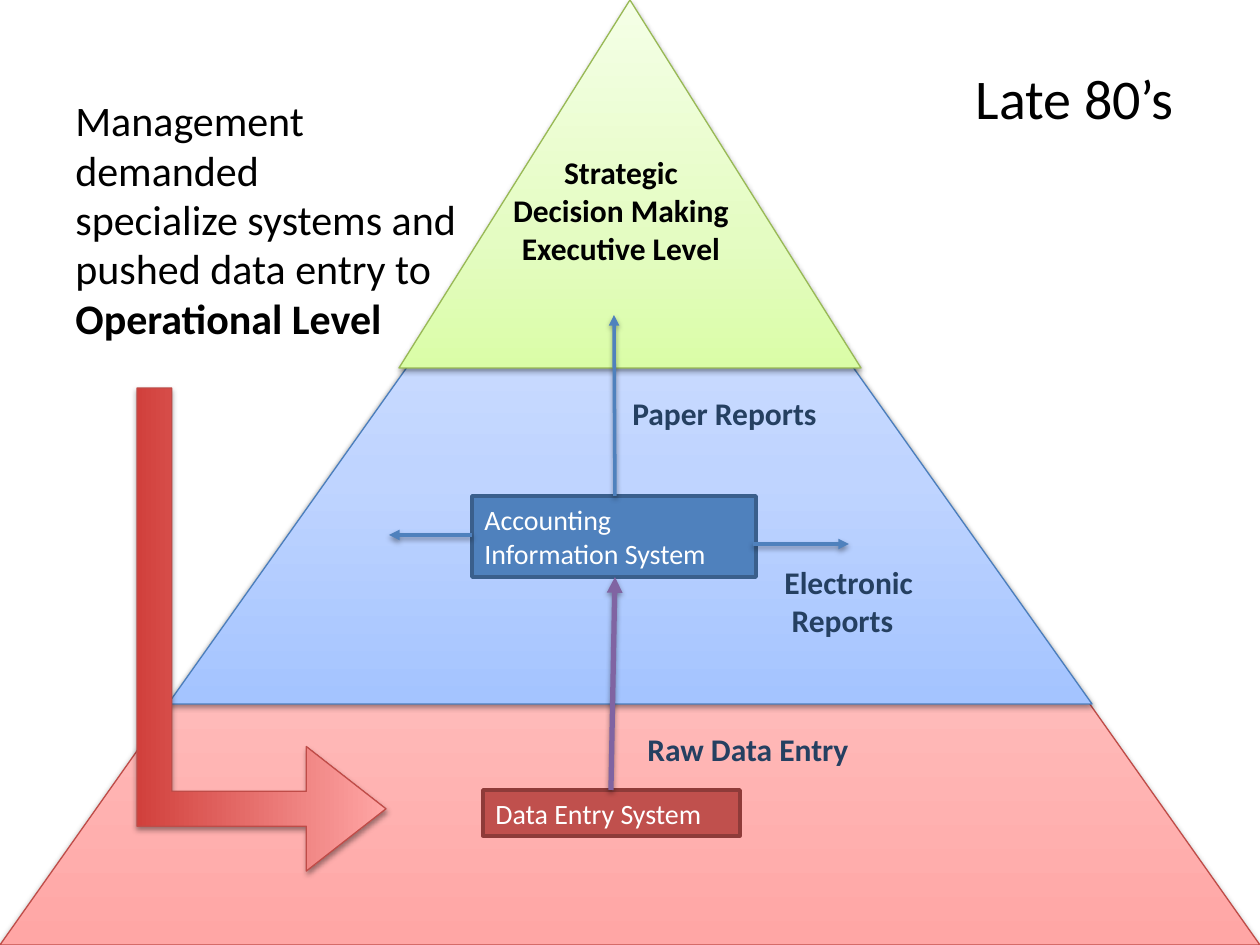
from dataclasses import dataclass

from lxml import etree
from pptx import Presentation
from pptx.dml.color import RGBColor
from pptx.enum.shapes import MSO_CONNECTOR, MSO_SHAPE
from pptx.enum.text import MSO_ANCHOR, PP_ALIGN
from pptx.oxml.ns import qn
from pptx.util import Emu, Pt

TRIANGLE = MSO_SHAPE.ISOSCELES_TRIANGLE
RECTANGLE = MSO_SHAPE.RECTANGLE
BENT_ARROW = MSO_SHAPE.BENT_UP_ARROW
STRAIGHT = MSO_CONNECTOR.STRAIGHT
LEFT, CENTER, RIGHT = PP_ALIGN.LEFT, PP_ALIGN.CENTER, PP_ALIGN.RIGHT
TOP, MIDDLE = MSO_ANCHOR.TOP, MSO_ANCHOR.MIDDLE

PX_PER_INCH = 126
PAGE_WIDTH, PAGE_HEIGHT = 1260, 945


@dataclass(frozen=True)
class Theme:
    font: str = "Calibri"
    heading: int = 32
    statement: int = 24
    label: int = 18
    system: int = 16
    black: str = "000000"
    white: str = "FFFFFF"
    navy: str = "254061"
    blue: str = "4F81BD"
    blue_edge: str = "3A5F8C"
    red: str = "C0504D"
    red_edge: str = "8E3B39"
    purple: str = "8064A2"
    red_line: str = "BF4C48"
    blue_line: str = "4B7EBC"
    green_line: str = "98B955"
    # Gradients run from the bottom to the top: (percent, colour)
    operational: tuple = ((0, "FFA6A5"), (35, "FFC0BF"), (100, "FFE7E7"))
    tactical: tuple = ((0, "A4C4FF"), (35, "BFD4FF"), (100, "E6EEFF"))
    strategic: tuple = ((0, "DAFDA7"), (35, "E4FCC2"), (100, "F5FFE7"))
    push: tuple = ((0, "D1403C"), (100, "FFA6A5"))


THEME = Theme()


def px(value):
    return Emu(round(value * 914400 / PX_PER_INCH))


def color(code):
    return RGBColor.from_string(code)


def add_node(parent, tag, **attributes):
    return etree.SubElement(parent, qn(tag), {k: str(v) for k, v in attributes.items()})


def set_line(shape, code, width):
    shape.line.color.rgb = color(code)
    shape.line.width = Pt(width)


def set_shadow(shape):
    effects = add_node(shape.element.spPr, "a:effectLst")
    shadow = add_node(effects, "a:outerShdw", blurRad=Pt(3.1), dist=Pt(1.6),
                      dir=90 * 60000, rotWithShape=0)
    add_node(add_node(shadow, "a:srgbClr", val=THEME.black), "a:alpha", val=38000)


def set_gradient(shape, stops):
    shape.fill.solid()
    properties = shape.element.spPr
    gradient = add_node(properties, "a:gradFill", rotWithShape=1)
    stop_list = add_node(gradient, "a:gsLst")
    for percent, code in stops:
        stop = add_node(stop_list, "a:gs", pos=percent * 1000)
        add_node(stop, "a:srgbClr", val=code)
    add_node(gradient, "a:lin", ang=270 * 60000, scaled=0)
    properties.replace(properties.find(qn("a:solidFill")), gradient)


def write_text(shape, text, size, code, bold=False, align=LEFT, anchor=TOP):
    frame = shape.text_frame
    frame.word_wrap = True
    frame.vertical_anchor = anchor
    frame.text = text
    for para in frame.paragraphs:
        para.alignment = align
        for span in para.runs:
            span.font.name = THEME.font
            span.font.size = Pt(size)
            span.font.bold = bold
            span.font.color.rgb = color(code)
    return frame


def add_gradient_shape(page, kind, bounds, stops, line):
    shape = page.shapes.add_shape(kind, *map(px, bounds))
    set_gradient(shape, stops)
    set_line(shape, line, 0.75)
    set_shadow(shape)
    return shape


def add_system_box(page, bounds, text, fill, edge):
    box = page.shapes.add_shape(RECTANGLE, *map(px, bounds))
    box.shadow.inherit = False
    box.fill.solid()
    box.fill.fore_color.rgb = color(fill)
    set_line(box, edge, 2)
    write_text(box, text, THEME.system, THEME.white, anchor=MIDDLE)


def add_text(page, bounds, text, size, code, **style):
    box = page.shapes.add_textbox(*map(px, bounds))
    return write_text(box, text, size, code, **style)


def add_label(page, bounds, text):
    frame = add_text(page, bounds, text, THEME.label, THEME.navy, bold=True)
    frame.word_wrap = False


def add_arrow(page, start, end, code, width):
    arrow = page.shapes.add_connector(STRAIGHT, *map(px, start + end))
    set_line(arrow, code, width)
    add_node(arrow.line._get_or_add_ln(), "a:tailEnd", type="triangle")
    set_shadow(arrow)


def main():
    deck = Presentation()
    deck.slide_width, deck.slide_height = px(PAGE_WIDTH), px(PAGE_HEIGHT)
    page = deck.slides.add_slide(deck.slide_layouts[6])

    # Management pyramid, widest level at the back
    for bounds, stops, line in (
        ((0, 53, 1260, 892), THEME.operational, THEME.red_line),
        ((168, 53, 924, 651), THEME.tactical, THEME.blue_line),
        ((399, 0, 462, 368), THEME.strategic, THEME.green_line),
    ):
        add_gradient_shape(page, TRIANGLE, bounds, stops, line)
    add_text(page, (311, 147, 620, 127), "Strategic\nDecision Making\nExecutive Level",
             THEME.label, THEME.black, bold=True, align=CENTER)

    # Statement and period
    statement = add_text(
        page, (63, 91, 480, 270),
        "Management\vdemanded\vspecialize systems and\vpushed data entry to\vOperational Level",
        THEME.statement, THEME.black)
    statement.paragraphs[0].line_spacing = 0.98
    statement.paragraphs[0].runs[-1].font.bold = True
    add_text(page, (609, 57, 577, 84), "Late 80’s", THEME.heading, THEME.black, align=RIGHT)

    # Systems
    add_system_box(page, (472, 496, 284, 81), "Accounting Information System",
                   THEME.blue, THEME.blue_edge)
    add_system_box(page, (483, 790, 257, 46), "Data Entry System", THEME.red, THEME.red_edge)

    # Push down to the operational level
    push = add_gradient_shape(page, BENT_ARROW, (20, 505, 483, 249), THEME.push, THEME.red_line)
    push.rotation = 90
    for index, ratio in enumerate((0.14, 0.25, 0.32)):
        push.adjustments[index] = ratio

    # Data and report flows
    for start, end, code, width in (
        ((615, 496), (614, 315), THEME.blue, 2),
        ((611, 790), (615, 577), THEME.purple, 3),
        ((753, 544), (849, 544), THEME.blue, 2),
        ((472, 535), (389, 535), THEME.blue, 2),
    ):
        add_arrow(page, start, end, code, width)
    add_label(page, (620, 388, 212, 50), "Paper Reports")
    add_label(page, (635, 724, 228, 50), "Raw Data Entry")
    add_label(page, (772, 557, 155, 89), "Electronic\v Reports")

    deck.save("out.pptx")


if __name__ == "__main__":
    main()
